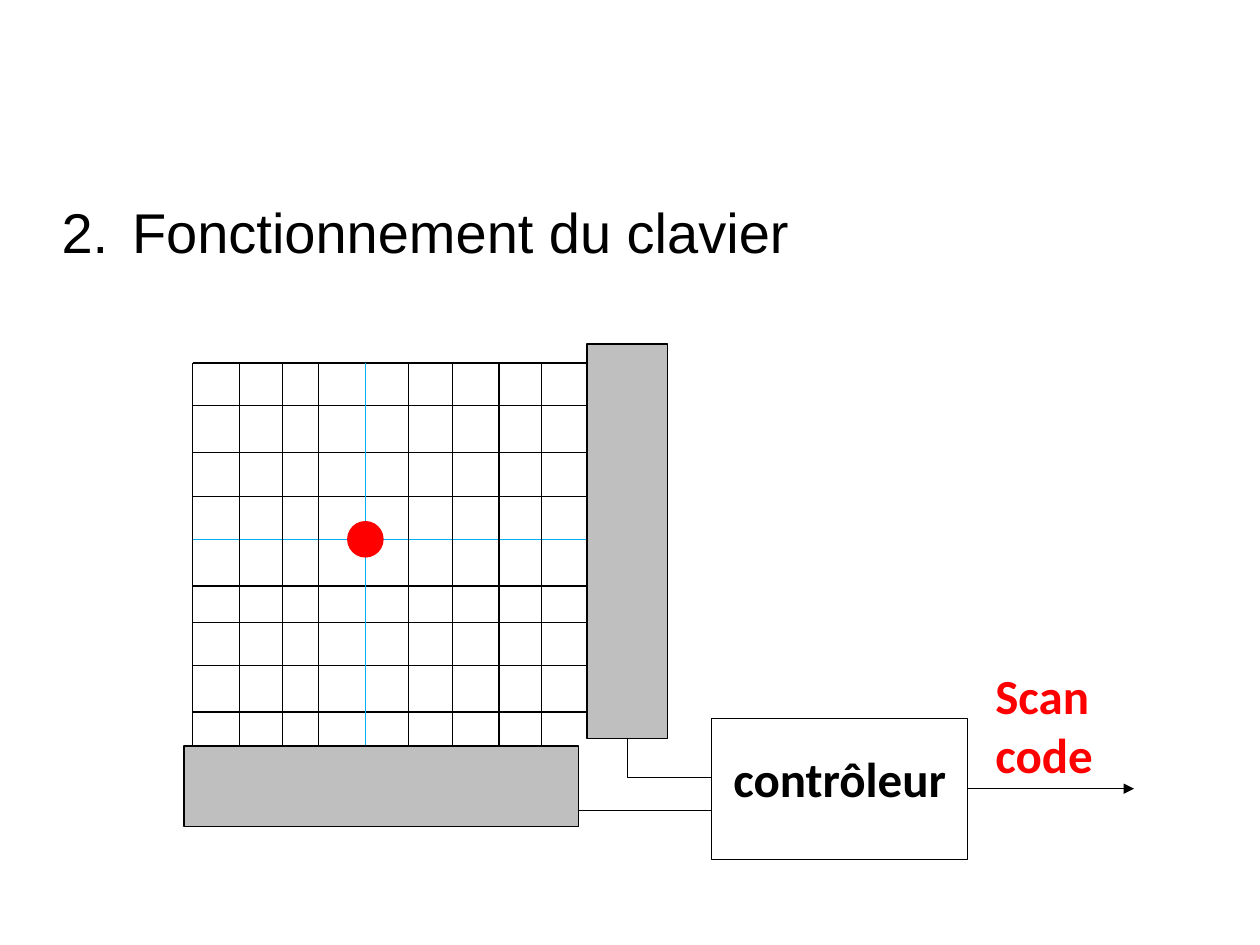
from dataclasses import dataclass

from lxml import etree
from pptx import Presentation
from pptx.dml.color import RGBColor
from pptx.enum import shapes, text
from pptx.oxml import ns
from pptx.util import Inches, Pt

BLACK = RGBColor(0x00, 0x00, 0x00)
WHITE = RGBColor(0xFF, 0xFF, 0xFF)
GREY = RGBColor(0xBF, 0xBF, 0xBF)
RED = RGBColor(0xFF, 0x00, 0x00)
BLUE = RGBColor(0x00, 0xB0, 0xF0)

SLIDE_WIDTH, SLIDE_HEIGHT = Inches(10), Inches(7.5)
COLUMNS, ROWS = 1000, 750
LINE_WIDTH = Pt(0.75)

KEY_COLUMNS = (153, 190, 224, 253, 290, 324, 359, 396, 430)
KEY_ROWS = (288, 322, 359, 394, 428, 465, 494, 528, 565)
PRESSED = 4


@dataclass(frozen=True)
class Area:
    column: float
    row: float
    columns: float
    rows: float

    def lengths(self) -> tuple:
        return (across(self.column), down(self.row),
                across(self.columns), down(self.rows))


@dataclass(frozen=True)
class Block:
    area: Area
    fill: RGBColor
    line: RGBColor = BLACK
    kind: shapes.MSO_SHAPE = shapes.MSO_SHAPE.RECTANGLE


@dataclass(frozen=True)
class Wire:
    start: tuple
    end: tuple
    color: RGBColor = BLACK
    kind: shapes.MSO_CONNECTOR = shapes.MSO_CONNECTOR.STRAIGHT


@dataclass(frozen=True)
class Style:
    font: str
    size: int
    color: RGBColor
    bold: bool = False
    align: text.PP_ALIGN = text.PP_ALIGN.LEFT


def across(columns: float) -> int:
    return round(SLIDE_WIDTH * columns / COLUMNS)


def down(rows: float) -> int:
    return round(SLIDE_HEIGHT * rows / ROWS)


def draw_block(slide, block: Block):
    shape = slide.shapes.add_shape(block.kind, *block.area.lengths())
    shape.shadow.inherit = False
    shape.fill.solid()
    shape.fill.fore_color.rgb = block.fill
    shape.line.color.rgb = block.line
    shape.line.width = LINE_WIDTH
    return shape


def draw_wire(slide, wire: Wire):
    (x1, y1), (x2, y2) = wire.start, wire.end
    connector = slide.shapes.add_connector(
        wire.kind, across(x1), down(y1), across(x2), down(y2))
    connector.line.color.rgb = wire.color
    connector.line.width = LINE_WIDTH
    etree.SubElement(connector._element.spPr, ns.qn("a:effectLst"))
    return connector


def add_arrowhead(connector) -> None:
    line = connector.line._get_or_add_ln()
    etree.SubElement(line, ns.qn("a:tailEnd"), type="triangle")


def bend_once(connector) -> None:
    properties = connector._element.spPr
    properties.find(ns.qn("a:prstGeom")).set("prst", "bentConnector2")
    frame = properties.find(ns.qn("a:xfrm"))
    frame.set("rot", str(270 * 60000))
    frame.set("flipH", "1")


def write(frame, lines: tuple, style: Style, margin: float = 0, top: float = 0):
    frame.word_wrap = True
    frame.vertical_anchor = text.MSO_ANCHOR.TOP
    frame.margin_left = frame.margin_right = across(margin)
    frame.margin_top, frame.margin_bottom = down(top), 0
    for index, line in enumerate(lines):
        paragraph = frame.add_paragraph() if index else frame.paragraphs[0]
        paragraph.alignment = style.align
        run = paragraph.add_run()
        run.text = line
        run.font.name = style.font
        run.font.size = Pt(style.size)
        run.font.bold = style.bold
        run.font.color.rgb = style.color


def number_from(paragraph, start: int, indent: float) -> None:
    properties = paragraph._p.get_or_add_pPr()
    properties.set("marL", str(across(indent)))
    properties.set("indent", str(-across(indent)))
    font = etree.SubElement(properties, ns.qn("a:buFont"))
    font.set("typeface", "Arial")
    etree.SubElement(properties, ns.qn("a:buAutoNum"),
                     type="arabicPeriod", startAt=str(start))


def draw_heading(slide) -> None:
    heading = slide.shapes.add_textbox(*Area(39, 152, 894, 70).lengths())
    write(heading.text_frame, ("Fonctionnement du clavier",),
          Style("Arial", 32, BLACK), margin=10, top=5)
    number_from(heading.text_frame.paragraphs[0], start=2, indent=56)


def draw_key_matrix(slide) -> None:
    left, top, right, bottom = KEY_COLUMNS[0], KEY_ROWS[0], 466, 592
    for index, row in enumerate(KEY_ROWS):
        color = BLUE if index == PRESSED else BLACK
        draw_wire(slide, Wire((left, row), (right, row), color))
    for index, column in enumerate(KEY_COLUMNS):
        color = BLUE if index == PRESSED else BLACK
        draw_wire(slide, Wire((column, top), (column, bottom), color))
    size = 28
    pressed_key = Area(KEY_COLUMNS[PRESSED] - size / 2,
                       KEY_ROWS[PRESSED] - size / 2, size, size)
    draw_block(slide, Block(pressed_key, RED, RED, shapes.MSO_SHAPE.OVAL))


def draw_controller(slide) -> None:
    draw_block(slide, Block(Area(146, 592, 313, 64), GREY))
    controller = draw_block(slide, Block(Area(565, 570, 203, 112), WHITE))
    label = Style("Calibri", 28, BLACK, True, text.PP_ALIGN.CENTER)
    write(controller.text_frame, ("contrôleur",), label, top=24)

    output = draw_wire(slide, Wire((768, 626), (900, 626)))
    output.begin_connect(controller, 3)
    add_arrowhead(output)
    scan_code = slide.shapes.add_textbox(*Area(790, 528, 110, 89).lengths())
    write(scan_code.text_frame, ("Scan", "code"),
          Style("Calibri", 28, RED, True))

    bend_once(draw_wire(slide, Wire((508, 560), (555, 627),
                                    kind=shapes.MSO_CONNECTOR.ELBOW)))
    draw_wire(slide, Wire((459, 643), (565, 643)))
    draw_block(slide, Block(Area(466, 273, 64, 313), GREY))


def main() -> None:
    presentation = Presentation()
    presentation.slide_width = SLIDE_WIDTH
    presentation.slide_height = SLIDE_HEIGHT
    slide = presentation.slides.add_slide(presentation.slide_layouts[6])
    draw_heading(slide)
    draw_key_matrix(slide)
    draw_controller(slide)
    presentation.save("out.pptx")


if __name__ == "__main__":
    main()
